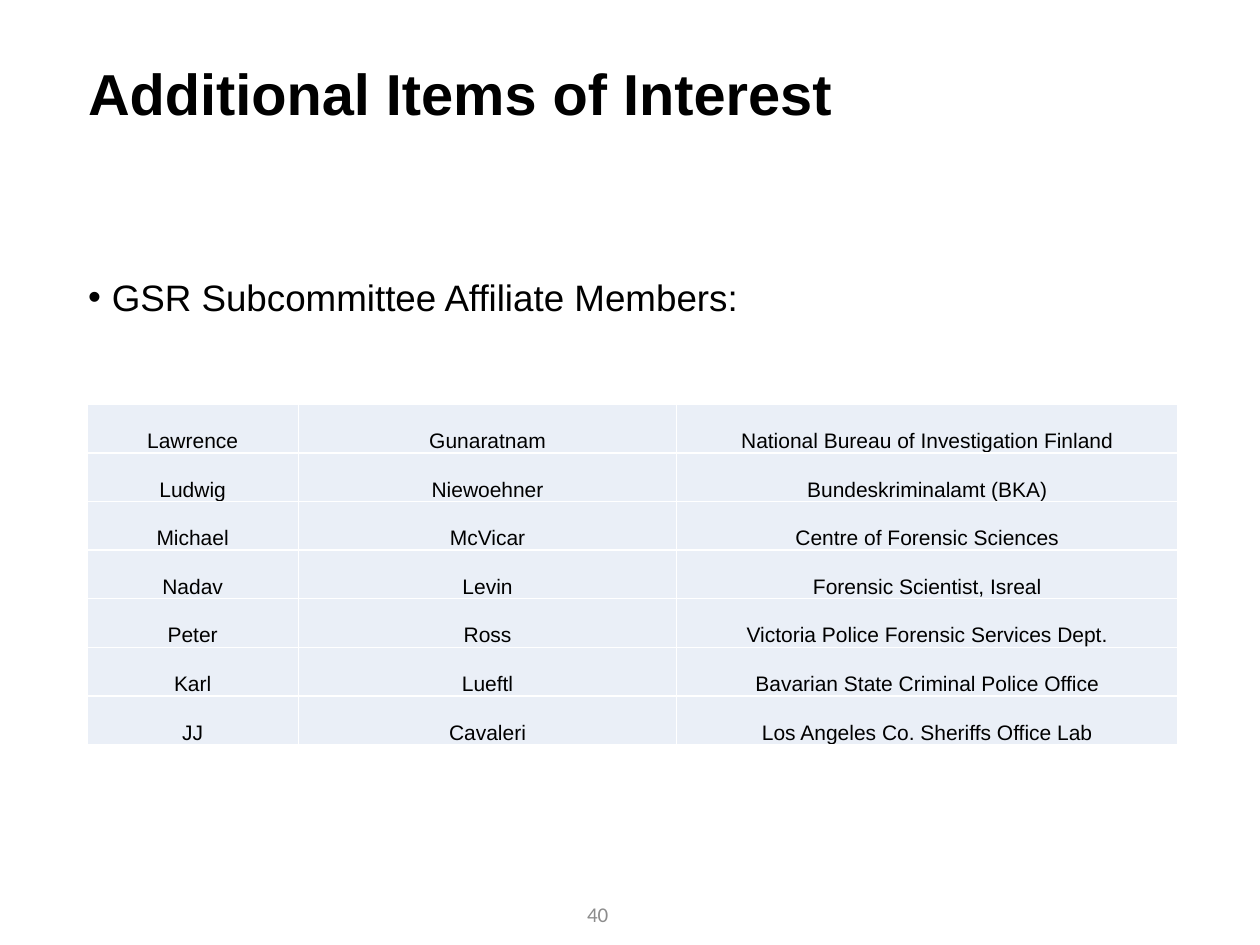
from typing import NamedTuple

from lxml.etree import SubElement
from pptx import Presentation
from pptx.dml.color import RGBColor
from pptx.enum.text import MSO_ANCHOR, MSO_AUTO_SIZE, PP_ALIGN
from pptx.oxml.ns import qn
from pptx.util import Cm, Pt

BLACK = RGBColor(0x00, 0x00, 0x00)
GRAY = RGBColor(0x8C, 0x8C, 0x8C)
PALE_BLUE = RGBColor(0xEA, 0xEF, 0xF7)
WHITE = RGBColor(0xFF, 0xFF, 0xFF)


class Member(NamedTuple):
    first_name: str
    last_name: str
    organization: str


MEMBERS = [
    Member("Lawrence", "Gunaratnam", "National Bureau of Investigation Finland"),
    Member("Ludwig", "Niewoehner", "Bundeskriminalamt (BKA)"),
    Member("Michael", "McVicar", "Centre of Forensic Sciences"),
    Member("Nadav", "Levin", "Forensic Scientist, Isreal"),
    Member("Peter", "Ross", "Victoria Police Forensic Services Dept."),
    Member("Karl", "Lueftl", "Bavarian State Criminal Police Office"),
    Member("JJ", "Cavaleri", "Los Angeles Co. Sheriffs Office Lab"),
]
COLUMN_WIDTHS = [Cm(4.27), Cm(7.62), Cm(10.11)]
ROW_HEIGHT = Cm(0.98)


def place(shape, left: float, top: float, width: float, height: float) -> None:
    shape.left, shape.top = Cm(left), Cm(top)
    shape.width, shape.height = Cm(width), Cm(height)


def write(frame, text: str, *, size: float, font: str = "Arial",
          color: RGBColor = BLACK, bold: bool = False,
          align: PP_ALIGN = PP_ALIGN.LEFT, line_spacing: float = 1.0,
          bullet: str = "", indent: int = 0) -> None:
    frame.word_wrap = True
    paragraph = frame.paragraphs[0]
    paragraph.alignment = align
    paragraph.line_spacing = line_spacing
    paragraph.space_before = Pt(0)
    if bullet:
        properties = paragraph._p.get_or_add_pPr()
        properties.set("marL", str(indent))
        properties.set("indent", str(-indent))
        SubElement(properties, qn("a:buFont"), typeface="Arial")
        SubElement(properties, qn("a:buChar"), char=bullet)
    run = paragraph.add_run()
    run.text = text
    run.font.name = font
    run.font.size = Pt(size)
    run.font.bold = bold
    run.font.color.rgb = color


def add_borders(cell, color: RGBColor) -> None:
    properties = cell._tc.get_or_add_tcPr()
    for side in ("a:lnL", "a:lnR", "a:lnT", "a:lnB"):
        border = SubElement(properties, qn(side), w=str(Pt(1)))
        fill = SubElement(border, qn("a:solidFill"))
        SubElement(fill, qn("a:srgbClr"), val=str(color))


def format_cell(cell, text: str) -> None:
    cell.margin_left = cell.margin_right = 0
    cell.margin_top = cell.margin_bottom = 0
    cell.vertical_anchor = MSO_ANCHOR.BOTTOM
    add_borders(cell, WHITE)
    cell.fill.solid()
    cell.fill.fore_color.rgb = PALE_BLUE
    write(cell.text_frame, text, size=12, align=PP_ALIGN.CENTER)


def add_member_table(slide, members: list[Member]) -> None:
    table = slide.shapes.add_table(
        len(members), len(COLUMN_WIDTHS), Cm(1.75), Cm(8.15),
        sum(COLUMN_WIDTHS), ROW_HEIGHT * len(members)).table
    table.first_row = False
    table.horz_banding = False
    for column, width in zip(table.columns, COLUMN_WIDTHS):
        column.width = width
    for row, member in zip(table.rows, members):
        row.height = ROW_HEIGHT
        for cell, text in zip(row.cells, member):
            format_cell(cell, text)


def main() -> None:
    presentation = Presentation()
    presentation.slide_width, presentation.slide_height = Cm(25.4), Cm(19.05)
    slide = presentation.slides.add_slide(presentation.slide_layouts[1])

    title = slide.shapes.title
    place(title, 1.52, 0.71, 21.89, 2.49)
    title.text_frame.auto_size = MSO_AUTO_SIZE.NONE
    title.text_frame.vertical_anchor = MSO_ANCHOR.MIDDLE
    write(title.text_frame, "Additional Items of Interest", size=33,
          bold=True, line_spacing=0.9)

    topic = slide.placeholders[1]
    place(topic, 1.52, 5.51, 21.89, 9.83)
    topic.text_frame.auto_size = MSO_AUTO_SIZE.NONE
    write(topic.text_frame, "GSR Subcommittee Affiliate Members:", size=21,
          line_spacing=0.9, bullet="•", indent=Cm(0.48))

    page_number = slide.shapes.add_textbox(Cm(9.19), Cm(17.91), Cm(5.72), Cm(1.02))
    page_number.text_frame.vertical_anchor = MSO_ANCHOR.MIDDLE
    write(page_number.text_frame, "40", size=12, font="Calibri", color=GRAY,
          align=PP_ALIGN.CENTER)

    add_member_table(slide, MEMBERS)
    presentation.save("out.pptx")


if __name__ == "__main__":
    main()
